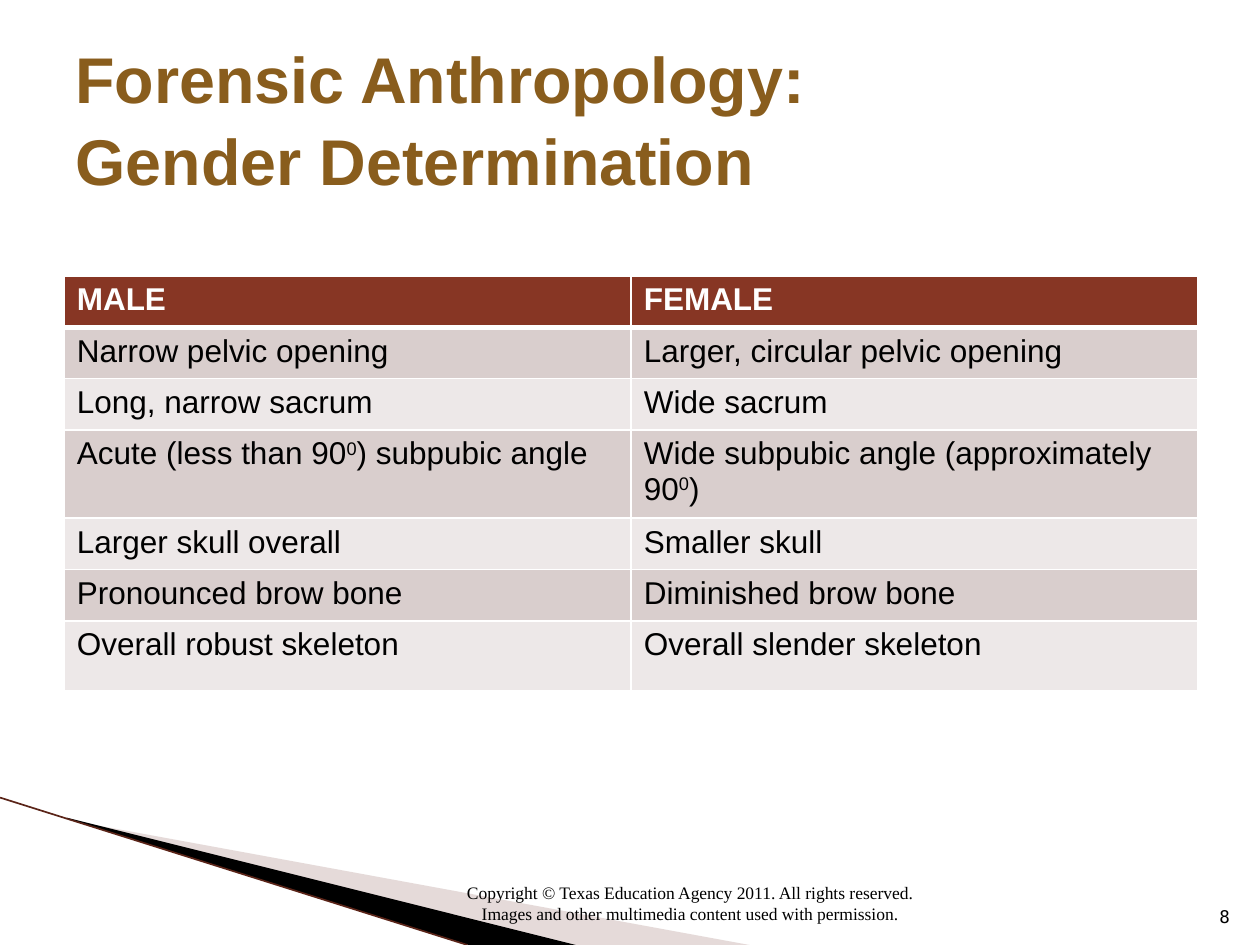
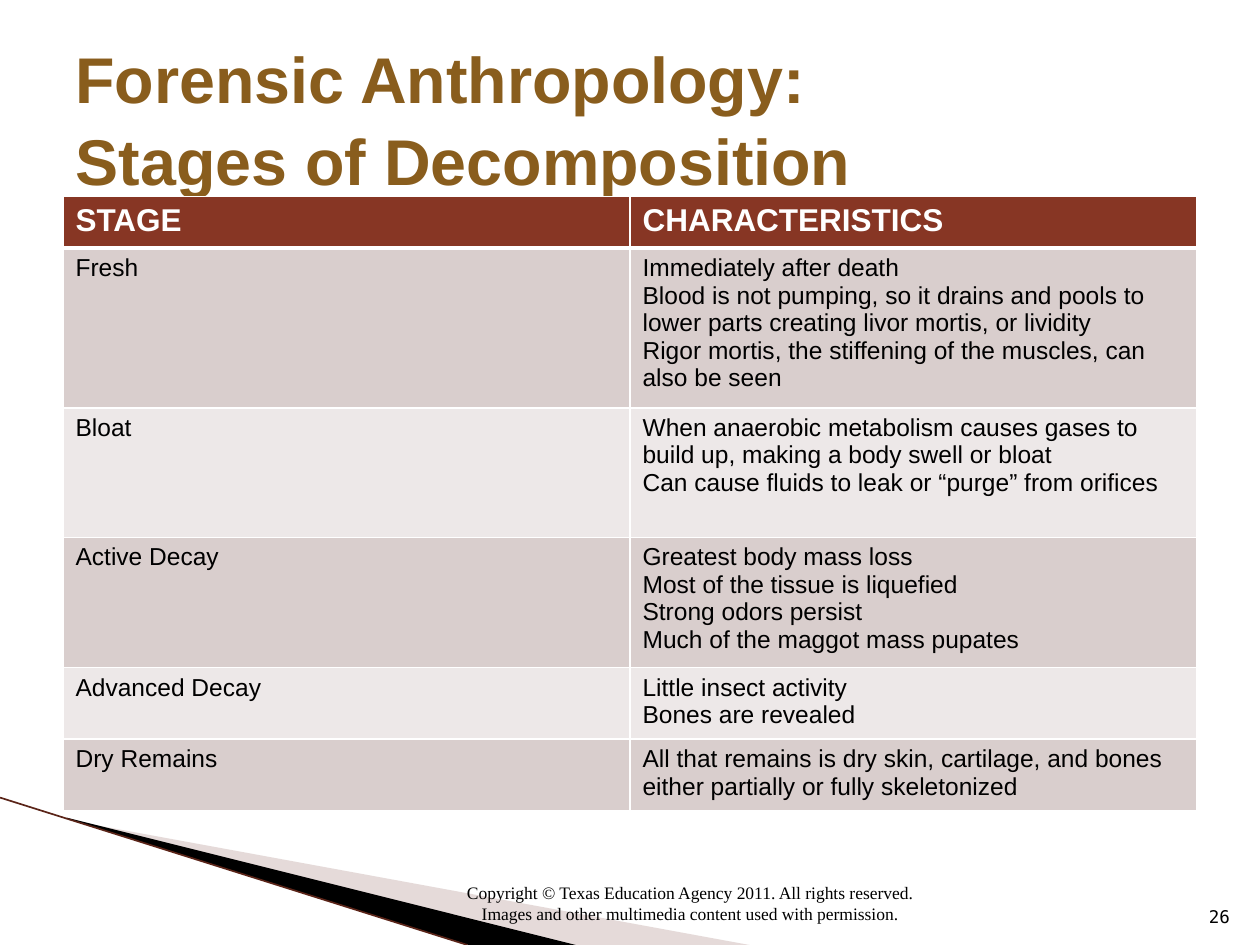
"""Build two forensic anthropology slides, each with a title and a table."""
from dataclasses import dataclass

from lxml import etree
from pptx import Presentation
from pptx.dml.color import RGBColor
from pptx.enum.shapes import MSO_CONNECTOR
from pptx.enum.text import MSO_ANCHOR, MSO_AUTO_SIZE, PP_ALIGN
from pptx.oxml.ns import qn
from pptx.util import Emu, Inches, Pt

LEFT, MID, RIGHT = PP_ALIGN.LEFT, PP_ALIGN.CENTER, PP_ALIGN.RIGHT
LOW, HALF = MSO_ANCHOR.BOTTOM, MSO_ANCHOR.MIDDLE
FIXED = MSO_AUTO_SIZE.NONE
LINE = MSO_CONNECTOR.STRAIGHT

WIDE, HIGH = Inches(10), Inches(7.5)

WHITE = RGBColor(0xFF, 0xFF, 0xFF)
BLACK = RGBColor(0, 0, 0)
GOLD = RGBColor(0x89, 0x5D, 0x1D)
RUST = RGBColor(0x87, 0x36, 0x24)
DARK = RGBColor(0xD9, 0xCE, 0xCD)
PALE = RGBColor(0xED, 0xE8, 0xE8)
ROSE = RGBColor(0xBF, 0xA4, 0xA1)
EDGE = RGBColor(0x5A, 0x24, 0x18)


@dataclass(frozen=True)
class Box:
    """A place on the slide, in percent of its width and height."""
    left: float
    top: float
    width: float
    height: float

    def emu(self) -> tuple[Emu, Emu, Emu, Emu]:
        """Return left, top, width and height as lengths."""
        return (*spot(self.left, self.top), *spot(self.width, self.height))


@dataclass(frozen=True)
class Style:
    """The look of a piece of text."""
    font: str
    size: float
    color: RGBColor
    bold: bool = False
    align: PP_ALIGN = LEFT


@dataclass(frozen=True)
class Wedge:
    """A filled corner shape with its points in percent."""
    points: tuple[tuple[float, float], ...]
    color: RGBColor
    alpha: int = 100


@dataclass(frozen=True)
class Page:
    """What one slide says; ^ marks turn raised text on and off."""
    title: tuple[str, ...]
    number: str
    box: Box
    size: float
    shares: tuple[int, ...]
    rows: tuple[tuple[str, str], ...]


TITLE = Style("Arial", 36.9, GOLD, True)
HEAD = Style("Arial", 18, WHITE, True)
NOTE = Style("Times New Roman", 10, BLACK, align=MID)
COUNT = Style("DejaVu Sans Mono", 10, BLACK, align=RIGHT)

TOP_BOX = Box(5, 4, 90, 16.67)
NOTE_BOX = Box(31.7, 94.4, 46.1, 4)
COUNT_BOX = Box(94.6, 93.47, 4, 5.33)

WEDGES = (
    Wedge(((5.5, 86.8), (59.5, 100), (45.6, 100), (5.5, 86.67)), ROSE, 40),
    Wedge(((5.3, 86.53), (45.7, 100), (37.2, 100), (5.4, 86.67)), BLACK),
)
RIGHTS = (
    "Copyright © Texas Education Agency 2011. All rights reserved.",
    "Images and other multimedia content used with permission.",
)

PAGES = (
    Page(
        ("Forensic Anthropology:", "Gender Determination"), "8",
        Box(5.1, 29.2, 90, 43.87), 18, (41, 41, 41, 70, 41, 41, 56),
        (
            ("MALE", "FEMALE"),
            ("Narrow pelvic opening", "Larger, circular pelvic opening"),
            ("Long, narrow sacrum", "Wide sacrum"),
            ("Acute (less than 90^0^) subpubic angle",
             "Wide subpubic angle (approximately 90^0^)"),
            ("Larger skull overall", "Smaller skull"),
            ("Pronounced brow bone", "Diminished brow bone"),
            ("Overall robust skeleton", "Overall slender skeleton"),
        ),
    ),
    Page(
        ("Forensic Anthropology:", "Stages of Decomposition"), "26",
        Box(5, 20.8, 90, 64.93), 14, (41, 127, 103, 103, 57, 57),
        (
            ("STAGE", "CHARACTERISTICS"),
            ("Fresh",
             "Immediately after death\n"
             "Blood is not pumping, so it drains and pools to lower parts "
             "creating livor mortis, or lividity\n"
             "Rigor mortis, the stiffening of the muscles, can also be seen"),
            ("Bloat",
             "When anaerobic metabolism causes gases to build up, "
             "making a body swell or bloat\n"
             "Can cause fluids to leak or “purge” from orifices"),
            ("Active Decay",
             "Greatest body mass loss\nMost of the tissue is liquefied\n"
             "Strong odors persist\nMuch of the maggot mass pupates"),
            ("Advanced Decay", "Little insect activity\nBones are revealed"),
            ("Dry Remains",
             "All that remains is dry skin, cartilage, and bones "
             "either partially or fully skeletonized"),
        ),
    ),
)


def spot(across: float, down: float) -> tuple[Emu, Emu]:
    """Turn percents of the slide into lengths."""
    return Emu(round(WIDE * across / 100)), Emu(round(HIGH * down / 100))


def add_run(para, text: str, style: Style, raised: bool = False) -> None:
    """Add one styled run to a paragraph."""
    run = para.add_run()
    run.text = text
    run.font.name = style.font
    run.font.size = Pt(style.size)
    run.font.bold = style.bold
    run.font.color.rgb = style.color
    if raised:
        run._r.get_or_add_rPr().set("baseline", "30000")


def write(frame, lines: tuple[str, ...], style: Style) -> None:
    """Write one paragraph per line."""
    for i, line in enumerate(lines):
        para = frame.add_paragraph() if i else frame.paragraphs[0]
        para.alignment = style.align
        for j, text in enumerate(line.split("^")):
            add_run(para, text, style, j % 2 == 1)


def add_text(slide, box: Box, lines: tuple[str, ...], style: Style) -> None:
    """Add a text box that sits on its lower edge."""
    frame = slide.shapes.add_textbox(*box.emu()).text_frame
    frame.word_wrap = True
    frame.vertical_anchor = LOW
    write(frame, lines, style)


def add_wedge(slide, wedge: Wedge) -> None:
    """Draw one filled wedge."""
    first, *rest = (spot(*point) for point in wedge.points)
    pen = slide.shapes.build_freeform(*first)
    pen.add_line_segments(rest)
    shape = pen.convert_to_shape()
    shape.shadow.inherit = False
    shape.line.fill.background()
    shape.fill.solid()
    shape.fill.fore_color.rgb = wedge.color
    if wedge.alpha < 100:
        tint = shape._element.spPr.find(".//" + qn("a:srgbClr"))
        etree.SubElement(tint, qn("a:alpha"), val=str(wedge.alpha * 1000))


def add_base(slide, number: str) -> None:
    """Draw the corner band, the rights note and the slide number."""
    for wedge in WEDGES:
        add_wedge(slide, wedge)
    rim = slide.shapes.add_connector(LINE, *spot(0, 84.4), *spot(37.1, 100))
    rim.line.color.rgb = EDGE
    rim.line.width = Pt(0.95)
    etree.SubElement(rim._element.spPr, qn("a:effectLst"))
    add_text(slide, NOTE_BOX, RIGHTS, NOTE)
    add_text(slide, COUNT_BOX, (number,), COUNT)


def set_title(slide, lines: tuple[str, ...]) -> None:
    """Place the title and fill it line by line."""
    title = slide.shapes.title
    title.left, title.top, title.width, title.height = TOP_BOX.emu()
    frame = title.text_frame
    frame.auto_size = FIXED
    frame.word_wrap = True
    frame.vertical_anchor = HALF
    para = frame.paragraphs[0]
    para.alignment = TITLE.align
    para.line_spacing = 1.05
    for i, line in enumerate(lines):
        if i:
            para.add_line_break()
        add_run(para, line, TITLE)


def set_edges(cell, row: int) -> None:
    """Give a cell white edges, thick below the header."""
    props = cell._tc.get_or_add_tcPr()
    for side in "LRTB":
        thick = (row, side) in ((0, "B"), (1, "T"))
        width = Pt(3 if thick else 1)
        edge = etree.SubElement(props, qn(f"a:ln{side}"), w=str(width))
        fill = etree.SubElement(edge, qn("a:solidFill"))
        etree.SubElement(fill, qn("a:srgbClr"), val=str(WHITE))


def add_grid(slide, page: Page) -> None:
    """Add the table, its height split among the rows by their shares."""
    place = page.box.emu()
    shape = slide.shapes.add_table(len(page.rows), 2, *place)
    table = shape.table
    table.horz_banding = False
    body = Style("Arial", page.size, BLACK)
    for i, texts in enumerate(page.rows):
        share = page.shares[i] / sum(page.shares)
        table.rows[i].height = Emu(round(place[3] * share))
        color = (DARK if i % 2 else PALE) if i else RUST
        for j, text in enumerate(texts):
            cell = table.cell(i, j)
            set_edges(cell, i)
            cell.fill.solid()
            cell.fill.fore_color.rgb = color
            write(cell.text_frame, tuple(text.split("\n")), body if i else HEAD)


def main() -> None:
    """Build and save the slides."""
    deck = Presentation()
    deck.slide_width, deck.slide_height = WIDE, HIGH
    for page in PAGES:
        slide = deck.slides.add_slide(deck.slide_layouts[5])
        set_title(slide, page.title)
        add_base(slide, page.number)
        add_grid(slide, page)
    deck.save("out.pptx")


if __name__ == "__main__":
    main()
